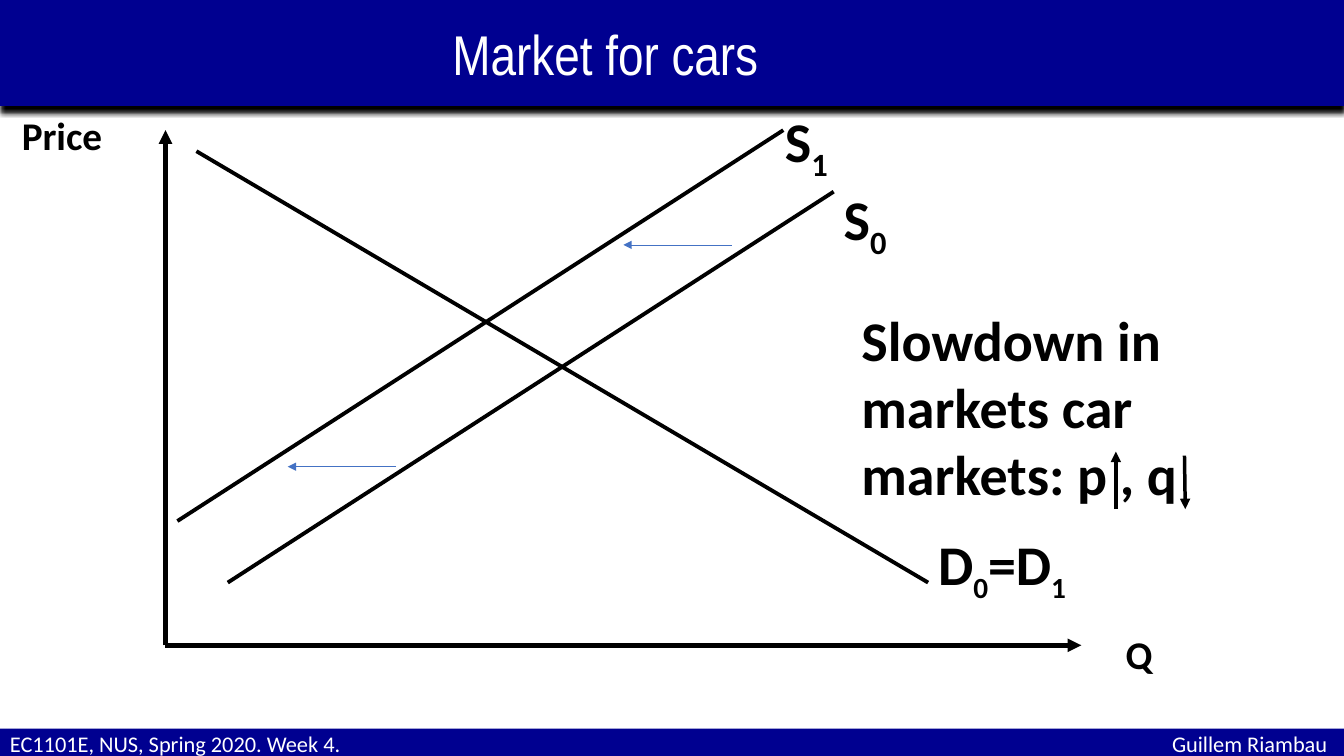
from lxml import etree
from pptx import Presentation
from pptx.dml.color import RGBColor
from pptx.enum.shapes import MSO_CONNECTOR, MSO_SHAPE
from pptx.enum.text import MSO_ANCHOR, MSO_AUTO_SIZE, PP_ALIGN
from pptx.oxml.ns import qn
from pptx.util import Cm, Pt

STRAIGHT = MSO_CONNECTOR.STRAIGHT
RECTANGLE = MSO_SHAPE.RECTANGLE
MIDDLE = MSO_ANCHOR.MIDDLE
LEFT = PP_ALIGN.LEFT
NO_AUTOFIT = MSO_AUTO_SIZE.NONE

COLORS = {"bar": "000090", "ink": "000000", "light": "FFFFFF", "shift": "4472C4"}
WIDTH, HEIGHT = 33.87, 19.05
ORIGIN = (4.17, 16.26)
SUPPLY = ((21.01, 4.83), (5.74, 14.68))
SUPPLY_SHIFT = (-1.27, -1.55)


class MarketSlide:
    body_font = "Calibri"
    title_font = "Arial Narrow"

    def __init__(self, deck):
        self.page = deck.slides.add_slide(deck.slide_layouts[5])

    def color(self, name):
        return RGBColor.from_string(COLORS[name])

    def style(self, para, size, color="ink", bold=False, font=None):
        para.alignment = LEFT
        para.font.name = font or self.body_font
        para.font.size = Pt(size)
        para.font.bold = bold
        para.font.color.rgb = self.color(color)

    def place(self, shape, left, top, width, height):
        shape.left, shape.top = Cm(left), Cm(top)
        shape.width, shape.height = Cm(width), Cm(height)

    def bar(self, shape):
        shape.fill.solid()
        shape.fill.fore_color.rgb = self.color("bar")
        shape.line.fill.background()
        effects = etree.SubElement(shape._element.spPr, qn("a:effectLst"))
        shadow = etree.SubElement(effects, qn("a:outerShdw"), blurRad=str(Pt(4)),
                                  dist=str(Pt(4)), dir="5400000", algn="t", rotWithShape="0")
        etree.SubElement(shadow, qn("a:srgbClr"), val=COLORS["ink"])
        frame = shape.text_frame
        frame.auto_size = NO_AUTOFIT
        frame.word_wrap = True
        frame.vertical_anchor = MIDDLE
        return frame

    def title(self, text, height, indent):
        title = self.page.shapes.title
        self.place(title, 0, 0, WIDTH, height)
        frame = self.bar(title)
        frame.margin_left = Cm(indent)
        frame.text = text
        self.style(frame.paragraphs[0], 40, "light", font=self.title_font)

    def footer(self, left_text, right_text, top, height):
        box = self.page.shapes.add_shape(RECTANGLE, 0, Cm(top), Cm(WIDTH), Cm(height))
        para = self.bar(box).paragraphs[0]
        para.text = f"{left_text}\t{right_text}"
        tabs = etree.SubElement(para._p.get_or_add_pPr(), qn("a:tabLst"))
        etree.SubElement(tabs, qn("a:tab"), pos=str(Cm(33.2)), algn="r")
        self.style(para, 16, "light")

    def label(self, spans, left, top, width=3.86, height=1.96, size=40, sub_size=40):
        box = self.page.shapes.add_textbox(Cm(left), Cm(top), Cm(width), Cm(height))
        box.text_frame.word_wrap = True
        para = box.text_frame.paragraphs[0]
        self.style(para, size, bold=True)
        for index, text in enumerate(spans):
            span = para.add_run()
            span.text = text
            if index % 2:
                span.font.size = Pt(sub_size)
                span._r.get_or_add_rPr().set("baseline", "-25000")

    def line(self, start, end, weight=2.75, color="ink", arrow=False):
        line = self.page.shapes.add_connector(
            STRAIGHT, Cm(start[0]), Cm(start[1]), Cm(end[0]), Cm(end[1]))
        line.line.width = Pt(weight)
        line.line.color.rgb = self.color(color)
        if arrow:
            etree.SubElement(line.line._get_or_add_ln(), qn("a:tailEnd"), type="triangle")
        etree.SubElement(line._element.spPr, qn("a:effectLst"))


def main():
    deck = Presentation()
    deck.slide_width, deck.slide_height = Cm(WIDTH), Cm(HEIGHT)
    slide = MarketSlide(deck)
    slide.title("Market for cars", height=2.67, indent=11.4)
    slide.footer("EC1101E, NUS, Spring 2020. Week 4.", "Guillem Riambau", top=18.36, height=0.76)

    for axis_end in ((ORIGIN[0], 3.28), (27.25, ORIGIN[1])):
        slide.line(ORIGIN, axis_end, 3.25, arrow=True)
    slide.label(["Price"], 0.3, 2.67, height=1.45, size=28)
    slide.label(["Q"], 28.12, 15.75, height=1.45, size=28)

    slide.line((23.39, 14.68), (4.95, 3.81))
    slide.line(*SUPPLY)
    slide.line(*[(x + SUPPLY_SHIFT[0], y + SUPPLY_SHIFT[1]) for x, y in SUPPLY])
    slide.label(["S", "0"], 21.01, 4.52)
    slide.label(["S", "1"], 19.53, 2.57)
    slide.label(["D", "0", "=D", "1"], 23.39, 13.23, width=4.7, sub_size=36)

    for x, y in ((18.44, 6.17), (9.98, 11.76)):
        slide.line((x, y), (x - 2.73, y), 0.5, "shift", arrow=True)

    slide.label(["Slowdown in markets car markets: p , q"], 21.46, 7.57, width=10.49, height=5.38)
    slide.line((28.12, 12.83), (28.12, 11.38), 2.5, arrow=True)
    slide.line((29.85, 11.48), (29.87, 12.83), 2.5, arrow=True)
    deck.save("out.pptx")


if __name__ == "__main__":
    main()
